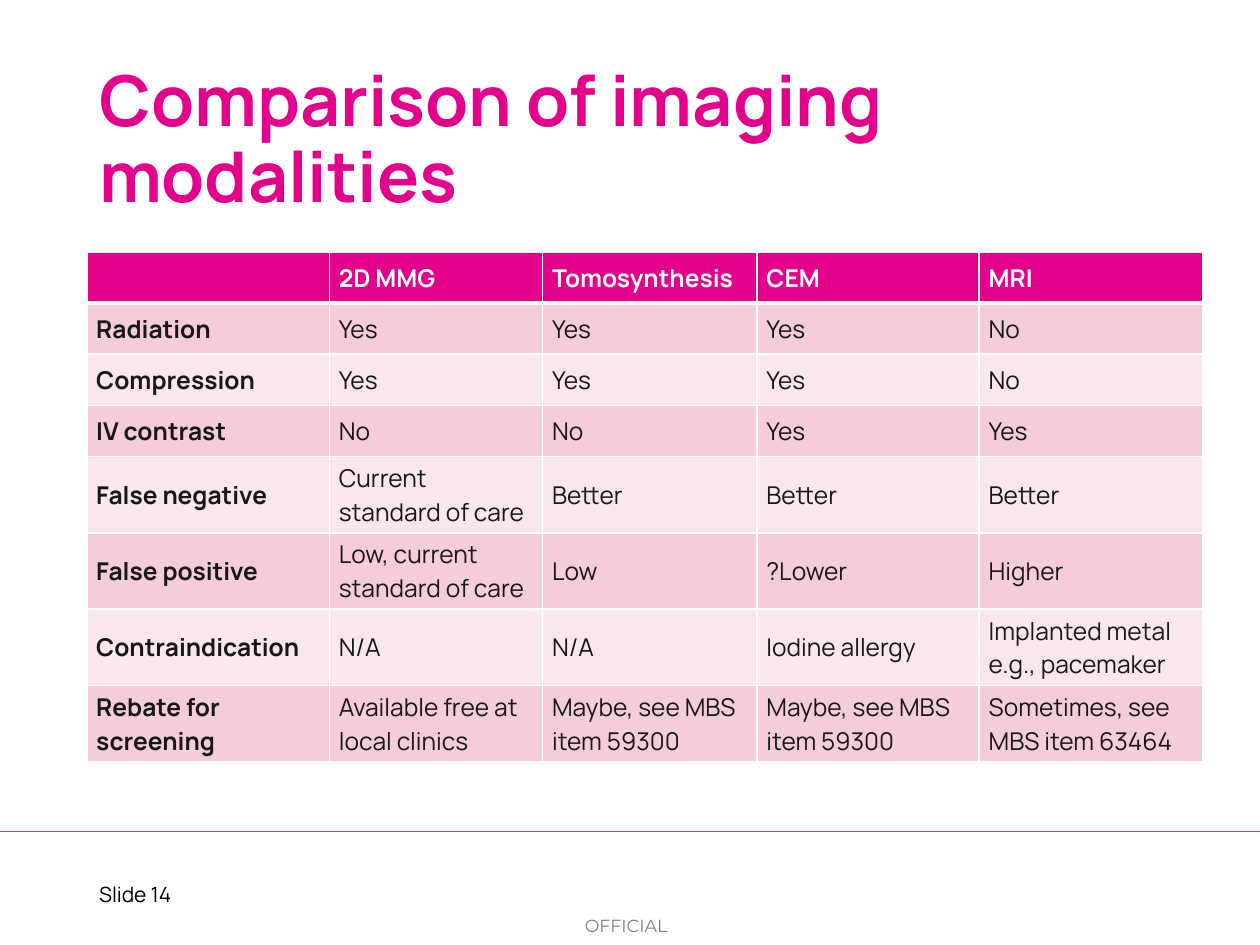
"""Build the slide comparing breast imaging modalities."""
from dataclasses import dataclass

from lxml import etree
from pptx import Presentation
from pptx.dml.color import RGBColor
from pptx.enum import shapes, text
from pptx.oxml import ns
from pptx.util import Cm, Pt


@dataclass(frozen=True)
class Theme:
    pink: str = "E3018C"
    rule: str = "DF3292"
    dark_band: str = "F4CCDA"
    light_band: str = "FAE7EE"
    ink: str = "181717"
    black: str = "000000"
    white: str = "FFFFFF"
    font: str = "Manrope"
    footer_font: str = "Montserrat"
    title: int = 40
    body: int = 14
    number: int = 12
    footer: int = 10


def style(p, size, color, bold=False, name=Theme.font):
    p.font.name, p.font.size, p.font.bold = name, Pt(size), bold
    p.font.color.rgb = RGBColor.from_string(color)


def border(cell, side, width):
    ln = etree.SubElement(cell._tc.get_or_add_tcPr(), ns.qn(f"a:ln{side}"), w=str(Pt(width)))
    fill = etree.SubElement(ln, ns.qn("a:solidFill"))
    etree.SubElement(fill, ns.qn("a:srgbClr"), val=theme.white)


theme = Theme()
rows = [
    ["", "2D MMG", "Tomosynthesis", "CEM", "MRI"],
    ["Radiation", "Yes", "Yes", "Yes", "No"],
    ["Compression", "Yes", "Yes", "Yes", "No"],
    ["IV contrast", "No", "No", "Yes", "Yes"],
    ["False negative", "Current standard of care", "Better", "Better", "Better"],
    ["False positive", "Low, current standard of care", "Low", "?Lower", "Higher"],
    ["Contraindication", "N/A", "N/A", "Iodine allergy", "Implanted metal e.g., pacemaker"],
    ["Rebate for screening", "Available free at local clinics", "Maybe, see MBS item 59300",
     "Maybe, see MBS item 59300", "Sometimes, see MBS item 63464"],
]
col_widths = [4.89, 4.3, 4.32, 4.48, 4.5]
row_heights = [1.03] * 4 + [1.54] * 4

prs = Presentation()
prs.slide_width, prs.slide_height = Cm(25.4), Cm(19.05)
s = prs.slides.add_slide(prs.slide_layouts[5])

rule = s.shapes.add_connector(shapes.MSO_CONNECTOR.STRAIGHT, Cm(25.4), Cm(16.76), 0, Cm(16.76))
rule.line.color.rgb = RGBColor.from_string(theme.rule)
rule.line.width = Pt(1)
etree.SubElement(rule._element.spPr, ns.qn("a:effectLst"))

number = s.shapes.add_textbox(Cm(1.75), Cm(17.65), Cm(2.18), Cm(0.76))
tf = number.text_frame
tf.word_wrap = False
tf.text = "Slide 14"
style(tf.paragraphs[0], theme.number, theme.black)

footer = s.shapes.add_textbox(Cm(11.79), Cm(18.44), Cm(1.93), Cm(0.43))
tf = footer.text_frame
tf.word_wrap = True
tf.margin_left = tf.margin_right = tf.margin_top = tf.margin_bottom = 0
tf.text = "OFFICIAL"
p = tf.paragraphs[0]
style(p, theme.footer, theme.black, name=theme.footer_font)
for color in p._p.iter(ns.qn("a:srgbClr")):
    etree.SubElement(color, ns.qn("a:alpha"), val="50000")

title = s.shapes.title
title.left, title.top, title.width, title.height = Cm(1.75), Cm(1.02), Cm(21.89), Cm(3.68)
tf = title.text_frame
tf.text = "Comparison of imaging modalities"
tf.auto_size = text.MSO_AUTO_SIZE.NONE
tf.vertical_anchor = text.MSO_ANCHOR.MIDDLE
p = tf.paragraphs[0]
p.alignment = text.PP_ALIGN.LEFT
p.line_spacing = 0.9
style(p, theme.title, theme.pink, bold=True)

frame = s.shapes.add_table(len(rows), len(col_widths), Cm(1.75), Cm(5.08),
                           Cm(sum(col_widths)), Cm(sum(row_heights)))
table = frame.table
for column, width in zip(table.columns, col_widths):
    column.width = Cm(width)
for row, height in zip(table.rows, row_heights):
    row.height = Cm(height)

for i, values in enumerate(rows):
    header = i == 0
    band = theme.pink if header else theme.dark_band if i % 2 else theme.light_band
    for j, value in enumerate(values):
        cell = table.cell(i, j)
        cell.vertical_anchor = text.MSO_ANCHOR.MIDDLE
        cell.margin_left = cell.margin_right = Cm(0.19)
        cell.margin_top = cell.margin_bottom = Cm(0.1)
        for side, width in zip("LRTB", (1, 1, 3 if i == 1 else 1, 3 if header else 1)):
            border(cell, side, width)
        cell.fill.solid()
        cell.fill.fore_color.rgb = RGBColor.from_string(band)
        cell.text = value
        style(cell.text_frame.paragraphs[0], theme.body,
              theme.white if header else theme.ink, bold=header or j == 0)

prs.save("out.pptx")
